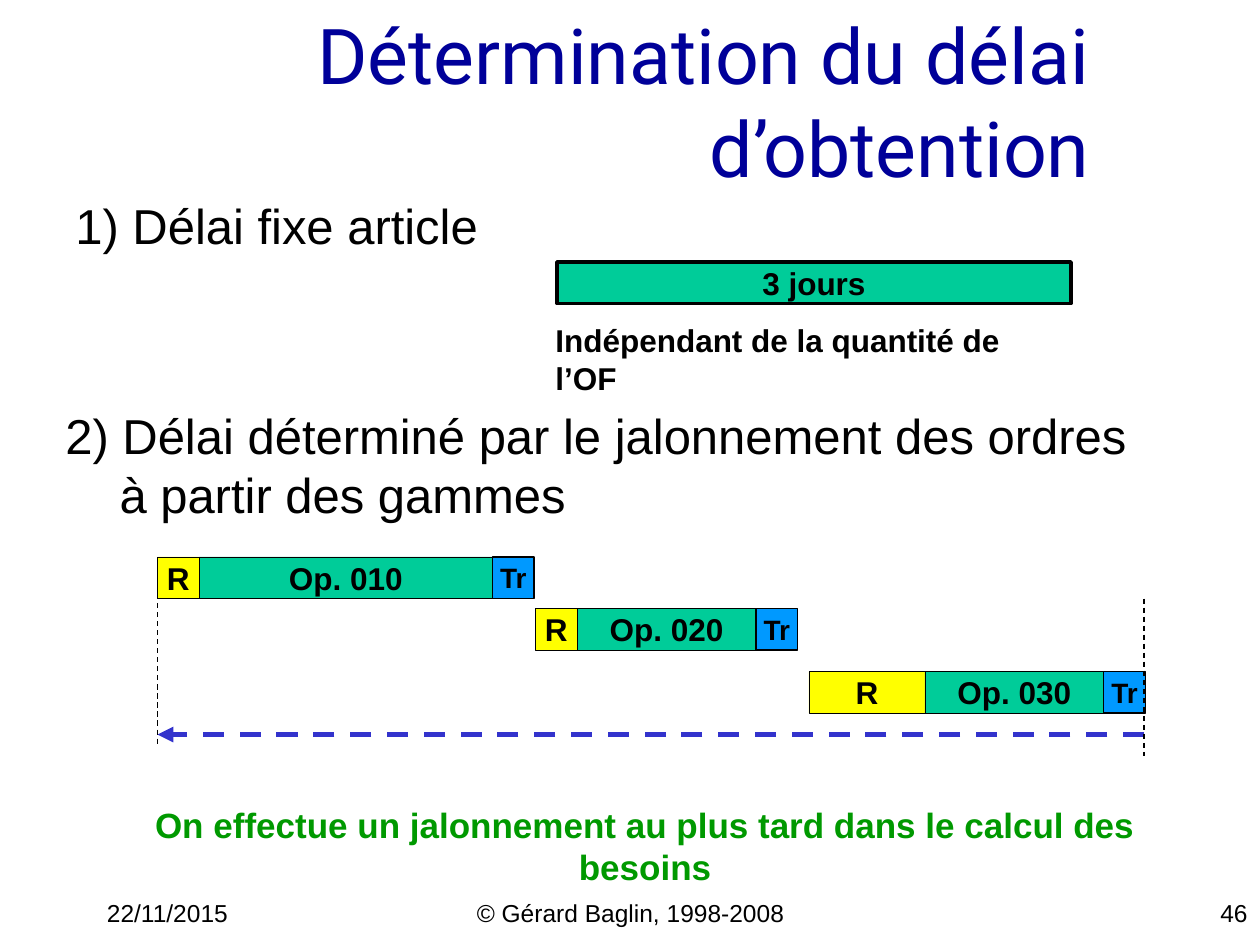
from lxml.etree import SubElement
from pptx import Presentation
from pptx.dml.color import RGBColor
from pptx.enum.dml import MSO_LINE
from pptx.enum.shapes import MSO_CONNECTOR, MSO_SHAPE
from pptx.enum.text import MSO_ANCHOR, PP_ALIGN
from pptx.oxml.ns import qn
from pptx.util import Inches, Pt

COLORS = {
    "black": "000000",
    "title": "000099",
    "operation": "00CC99",
    "setup": "FFFF00",
    "transfer": "0099FF",
    "arrow": "3333CC",
    "conclusion": "009900",
}
LEFT, CENTER, RIGHT = PP_ALIGN.LEFT, PP_ALIGN.CENTER, PP_ALIGN.RIGHT
BAR_HEIGHT = 0.33
TRANSFER_WIDTH = 0.33


class SlideBuilder:
    """Draw styled elements on the current slide."""

    def __init__(self, slide, font="Arial"):
        self.slide = slide
        self.font = font

    def color(self, name):
        return RGBColor.from_string(COLORS[name])

    def fill_text(self, shape, text, size, color, bold, align, anchor, wrap, font=None):
        frame = shape.text_frame
        frame.text = text
        frame.word_wrap = wrap
        frame.vertical_anchor = anchor
        for paragraph in frame.paragraphs:
            paragraph.alignment = align
            for run in paragraph.runs:
                run.font.name = font or self.font
                run.font.size = Pt(size)
                run.font.bold = bold
                run.font.color.rgb = self.color(color)

    def text(self, box, text, size, color="black", bold=False, align=LEFT,
             anchor=MSO_ANCHOR.TOP, wrap=True, font=None, hanging=0):
        shape = self.slide.shapes.add_textbox(*map(Inches, box))
        self.fill_text(shape, text, size, color, bold, align, anchor, wrap, font)
        if hanging:
            properties = shape.text_frame.paragraphs[0]._p.get_or_add_pPr()
            properties.set("marL", str(Inches(hanging)))
            properties.set("indent", str(-Inches(hanging)))

    def bar(self, left, top, width, text, fill, size=18, line_width=0.25):
        shape = self.slide.shapes.add_shape(
            MSO_SHAPE.RECTANGLE, *map(Inches, (left, top, width, BAR_HEIGHT)))
        shape.shadow.inherit = False
        shape.fill.solid()
        shape.fill.fore_color.rgb = self.color(fill)
        shape.line.color.rgb = self.color("black")
        shape.line.width = Pt(line_width)
        self.fill_text(shape, text, size, "black", True, CENTER, MSO_ANCHOR.MIDDLE, False)

    def operation(self, left, top, setup_width, run_width, label):
        run_left = left + setup_width
        self.bar(left, top, setup_width, "R", "setup")
        self.bar(run_left, top, run_width, label, "operation")
        self.bar(run_left + run_width, top, TRANSFER_WIDTH, "Tr", "transfer", 16, 0.75)

    def dashed_line(self, start, end, color="black", width=0.75, arrow=False):
        connector = self.slide.shapes.add_connector(
            MSO_CONNECTOR.STRAIGHT, *map(Inches, start + end))
        connector.line.color.rgb = self.color(color)
        connector.line.width = Pt(width)
        connector.line.dash_style = MSO_LINE.DASH
        properties = connector._element.spPr
        if arrow:
            SubElement(properties.find(qn("a:ln")), qn("a:tailEnd"), type="triangle")
        SubElement(properties, qn("a:effectLst"))


def main():
    presentation = Presentation()
    presentation.slide_width = Inches(10)
    presentation.slide_height = Inches(7.5)
    builder = SlideBuilder(presentation.slides.add_slide(presentation.slide_layouts[6]))

    builder.text((0.75, 7.08, 2.08, 0.25), "22/11/2015", 14)
    builder.text((3.42, 7.08, 3.17, 0.25), "© Gérard Baglin, 1998-2008", 14, align=CENTER)
    builder.text((7.92, 7.08, 2.08, 0.25), "46", 14, align=RIGHT)
    builder.text((0.25, 0.17, 8.5, 1.25), "Détermination du délai d’obtention", 44,
                 "title", align=RIGHT, anchor=MSO_ANCHOR.MIDDLE, font="Roboto")

    builder.text((0.5, 1.5, 3.41, 0.57), "1) Délai fixe article", 28, wrap=False)
    builder.bar(4.42, 2.08, 4.08, "3 jours", "operation", line_width=2)
    builder.text((4.31, 2.5, 4.28, 0.4), "Indépendant de la quantité de l’OF", 18,
                 bold=True, wrap=False)

    builder.text((0.42, 3.17, 8.65, 1.03),
                 "2) Délai déterminé par le jalonnement des ordres\và partir des gammes",
                 28, wrap=False, hanging=0.43)
    start, end = 1.25, 9.08
    for left, top, setup_width, run_width, label in (
        (start, 4.42, 0.33, 2.33, "Op. 010"),
        (4.25, 4.83, 0.33, 1.42, "Op. 020"),
        (6.42, 5.33, 0.92, 1.42, "Op. 030"),
    ):
        builder.operation(left, top, setup_width, run_width, label)
    builder.dashed_line((end, 5.83), (start, 5.83), "arrow", 3, arrow=True)
    builder.dashed_line((end, 4.75), (end, 6))
    builder.dashed_line((start, 4.5), (start, 5.92))

    builder.text((0.58, 6.33, 9.08, 0.43),
                 "On effectue un jalonnement au plus tard dans le calcul des besoins",
                 20, "conclusion", bold=True, align=CENTER)
    presentation.save("out.pptx")


if __name__ == "__main__":
    main()
